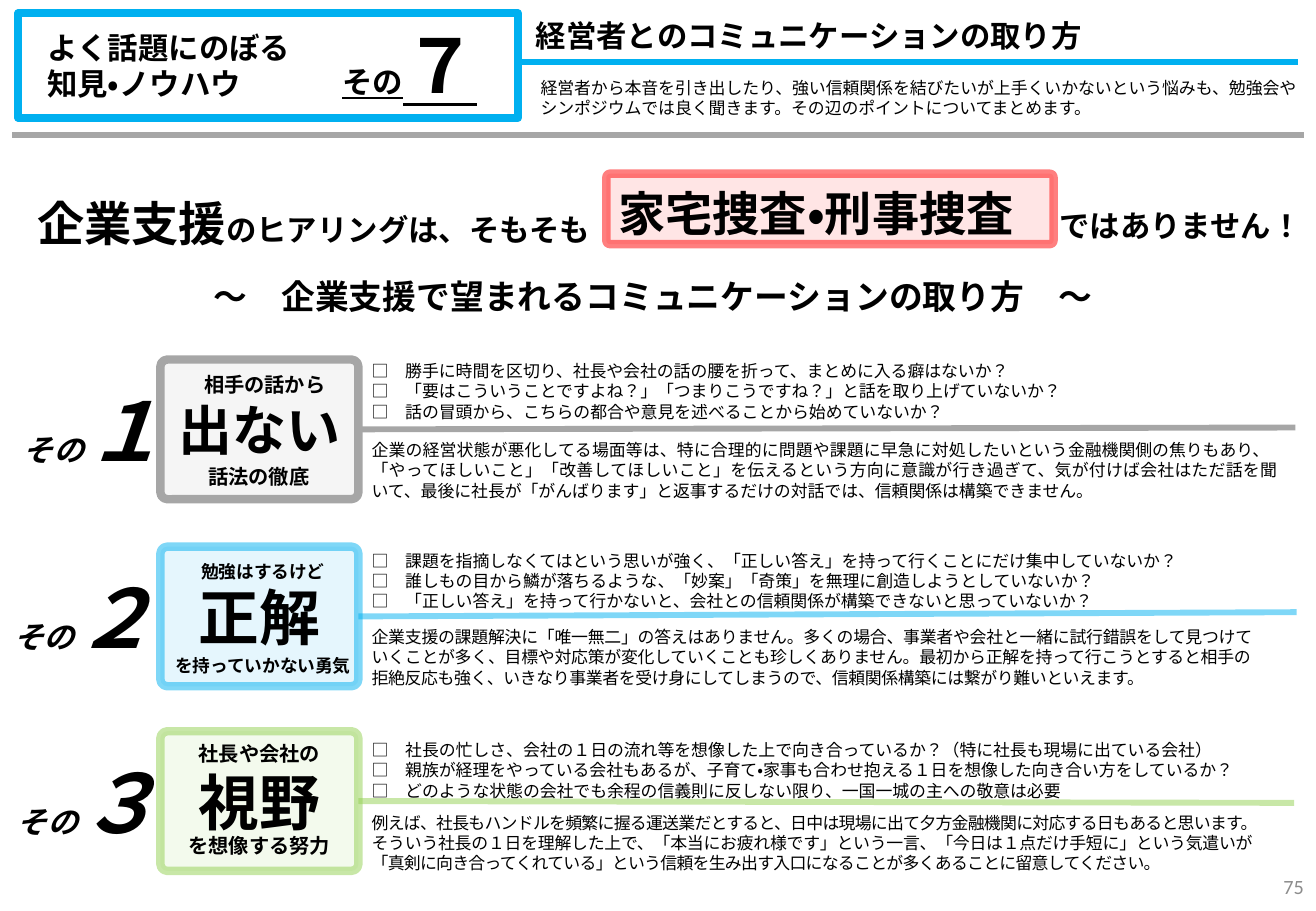
from pptx import Presentation
from pptx.dml.color import RGBColor
from pptx.enum.lang import MSO_LANGUAGE_ID
from pptx.enum.shapes import MSO_CONNECTOR, MSO_SHAPE
from pptx.enum.text import MSO_ANCHOR, MSO_AUTO_SIZE, PP_ALIGN
from pptx.oxml.ns import qn
from pptx.util import Inches, Pt
from lxml.etree import SubElement

deck = Presentation()
deck.slide_width, deck.slide_height = Inches(10.83), Inches(7.5)
slide = deck.slides.add_slide(deck.slide_layouts[5])
shapes = slide.shapes


def paint(color, tone, alpha=100):
    """Give a fill, line or font colour a hex tone and an opacity in percent."""
    if hasattr(color, "solid"):
        color.solid()
        color = color.fore_color
    color.rgb = RGBColor.from_string(tone)
    if alpha < 100:
        node = color._xFill.find(qn("a:srgbClr"))
        SubElement(node, qn("a:alpha"), val=str(alpha * 1000))


def write(spot, paras, size, align=PP_ALIGN.LEFT, holder=None, tone="000000", **base):
    """Fill a text box, or a given shape; a run is (text, format dict)."""
    if holder is None:
        holder = shapes.add_textbox(*map(Inches, spot))
        holder.text_frame.auto_size = MSO_AUTO_SIZE.SHAPE_TO_FIT_TEXT
    frame = holder.text_frame
    frame.word_wrap = True
    for i, runs in enumerate(paras):
        para = frame.add_paragraph() if i else frame.paragraphs[0]
        para.alignment = align
        for words, extra in [(runs, {})] if isinstance(runs, str) else runs:
            run = para.add_run()
            run.text = words
            form = {"name": "Arial", "size": size,
                    "language_id": MSO_LANGUAGE_ID.JAPANESE, **base, **extra}
            form["size"] = Pt(form["size"])
            gap = form.pop("gap", 0)
            for key, value in form.items():
                setattr(run.font, key, value)
            paint(run.font.fill, tone)
            if gap:
                run._r.get_or_add_rPr().set("spc", str(gap))
    return frame


# Boxes: header frame, headline and one per row
boxes = []
for spot, tone, width, alpha, filled in [
    ((0.15, 0.11, 4.11, 0.86), "00B0F0", 4.75, 100, False),
    ((4.99, 1.43, 3.68, 0.58), "FF0000", 5, 50, True),
    ((1.32, 2.96, 1.63, 1.15), "A6A6A6", 5, 100, True),
    ((1.32, 4.5, 1.63, 1.15), "00B0F0", 5, 50, True),
    ((1.32, 6.02, 1.63, 1.15), "92D050", 5, 50, True),
]:
    kind = MSO_SHAPE.ROUNDED_RECTANGLE if filled else MSO_SHAPE.RECTANGLE
    box = shapes.add_shape(kind, *map(Inches, spot))
    box.shadow.inherit = False
    if filled:
        box.adjustments[0] = 0.05
        paint(box.fill, tone, 10)
    else:
        box.fill.background()
    paint(box.line.fill, tone, alpha)
    box.line.width = Pt(width)
    boxes.append(box)

# Rules: header, divider and one from the side of each row box
for start, end, tone, alpha, box in [
    ((4.25, 0.51), (10.68, 0.51), "00B0F0", 100, None),
    ((0.1, 1.11), (10.73, 1.11), "A6A6A6", 100, None),
    ((2.95, 3.53), (10.66, 3.52), "A6A6A6", 100, boxes[2]),
    ((2.95, 5.07), (10.67, 5.04), "00B0F0", 50, boxes[3]),
    ((2.95, 6.6), (10.65, 6.61), "92D050", 50, boxes[4]),
]:
    rule = shapes.add_connector(MSO_CONNECTOR.STRAIGHT, *map(Inches, start + end))
    if box:
        rule.begin_connect(box, 3)
    paint(rule.line.fill, tone, alpha)
    rule.line.width = Pt(3.5)
    SubElement(rule._element.spPr, qn("a:effectLst"))

# Title
title = shapes.title
title.left, title.top, title.width, title.height = map(Inches, (4.31, 0.09, 6.36, 0.4))
title.text_frame.vertical_anchor = MSO_ANCHOR.TOP
title.text_frame.auto_size = MSO_AUTO_SIZE.NONE
write(None, ["経営者とのコミュニケーションの取り方"], 18, holder=title, bold=True)

# Header
write((0.29, 0.19, 2.68, 0.71), ["よく話題にのぼる", "知見・ノウハウ"], 18, bold=True)
write((2.72, 0.11, 1.75, 0.84), [[("その", {}), ("７", {"size": 44})]], 18,
      bold=True, underline=True)
write((4.35, 0.59, 6.43, 0.44),
      ["経営者から本音を引き出したり、強い信頼関係を結びたいが上手くいかないという悩みも、"
       "勉強会やシンポジウムでは良く聞きます。その辺のポイントについてまとめます。"],
      10, name="Calibri")

# Headline
write((0.21, 1.55, 5.03, 0.57),
      [[("企業支援", {"size": 28}), ("のヒアリングは、そもそも", {})]], 18, bold=True)
write((4.99, 1.47, 3.82, 0.57), ["家宅捜査・刑事捜査"], 28, bold=True)
write((8.62, 1.66, 2.21, 0.4), ["ではありません！"], 18, bold=True)
write((1.66, 2.22, 7.51, 0.44),
      ["～　企業支援で望まれるコミュニケーションの取り方　～"], 20, bold=True)

# Rows: number, key word with captions, checks and comment
rows = [
    {
        "num": ("１", 0.09, 3.08), "key": ("出ない", 32), "small": 12,
        "caps": [("相手の話から", 1.5, 3.02, 1.36), ("話法の徹底", 1.45, 3.77, 1.36)],
        "tops": (2.92, 3.57),
        "checks": ["勝手に時間を区切り、社長や会社の話の腰を折って、まとめに入る癖はないか？",
                   "「要はこういうことですよね？」「つまりこうですね？」と話を取り上げていないか？",
                   "話の冒頭から、こちらの都合や意見を述べることから始めていないか？"],
        "note": [[
            ("企業の経営状態が悪化してる場面等は、特に合理的に問題や課題に早急に対処したいという", {"gap": 10}),
            ("金融機関側の焦りもあり、", {}),
            ("「やってほしいこと」「改善してほしいこと」を伝えるという方向に意識が行き過ぎて、"
             "気が付けば会社はただ話を", {"gap": 20}),
            ("聞いて、最後に社長が「がんばります」と返事するだけの対話では、信頼関係は構築できません。", {})]],
    },
    {
        "num": ("２", 0.01, 4.62), "key": ("正解", 36), "small": 10.5,
        "caps": [("勉強はするけど", 1.31, 4.57, 1.71), ("を持っていかない勇気", 1.31, 5.34, 1.71)],
        "tops": (4.48, 5.11),
        "checks": ["課題を指摘しなくてはという思いが強く、「正しい答え」を持って行くことにだけ集中していないか？",
                   "誰しもの目から鱗が落ちるような、「妙案」「奇策」を無理に創造しようとしていないか？",
                   "「正しい答え」を持って行かないと、会社との信頼関係が構築できないと思っていないか？"],
        "note": [
            [("企業支援の課題解決に「唯一無二」の答えはありません。多くの場合、事業者や会社と一緒に試行錯誤をして見つけて", {"gap": -10})],
            [("いくことが多く、目標や対応策が変化していくことも珍しくありません。最初から正解を持って行こうとすると相手の", {"gap": -10})],
            [("拒絶反応も強く、いきなり事業者を受け身にしてしまうので、信頼関係構築には繋がり難いといえます。", {"gap": -20})]],
    },
    {
        "num": ("３", 0.04, 6.15), "key": ("視野", 36), "small": 12,
        "caps": [("社長や会社の", 1.4, 6.05, 1.47), ("を想像する努力", 1.4, 6.81, 1.47)],
        "tops": (6.04, 6.64),
        "checks": ["社長の忙しさ、会社の１日の流れ等を想像した上で向き合っているか？（特に社長も現場に出ている会社）",
                   "親族が経理をやっている会社もあるが、子育て・家事も合わせ抱える１日を想像した向き合い方をしているか？",
                   "どのような状態の会社でも余程の信義則に反しない限り、一国一城の主への敬意は必要"],
        "note": [
            [("例えば、社長もハンドルを頻繁に握る運送業だとすると、日中は現場に出て夕方金融機関に対応する日もあると思います。", {"gap": -40})],
            [("そういう社長の１日を理解した上で、「本当にお疲れ様です」という一言、「今日は１点だけ手短に」という気遣いが", {"gap": -10})],
            [("「真剣に向き合ってくれている」という信頼を生み出す入口になることが多くあることに留意してください。", {"gap": -40})]],
    },
]
for row, box in zip(rows, boxes[2:]):
    digit, left, top = row["num"]
    write((left, top, 1.55, 0.91), [[("その", {}), (digit, {"size": 48})]], 18,
          bold=True, italic=True)
    word, size = row["key"]
    frame = write(None, [word], size, PP_ALIGN.CENTER, box, bold=True)
    frame.vertical_anchor = MSO_ANCHOR.MIDDLE
    for words, left, top, width in row["caps"]:
        write((left, top, width, 0.3), [words], row["small"], PP_ALIGN.CENTER, bold=True)
    upper, lower = row["tops"]
    write((2.96, upper, 7.85, 0.61), ["□　" + check for check in row["checks"]], 10)
    write((2.96, lower, 7.72, 0.61), row["note"], 10)

# Page number
page = write((10.3, 7.1, 0.53, 0.4), ["75"], 12, PP_ALIGN.RIGHT, tone="8C8C8C", name="Calibri")
page.auto_size = MSO_AUTO_SIZE.NONE
page.vertical_anchor = MSO_ANCHOR.MIDDLE

deck.save("out.pptx")
